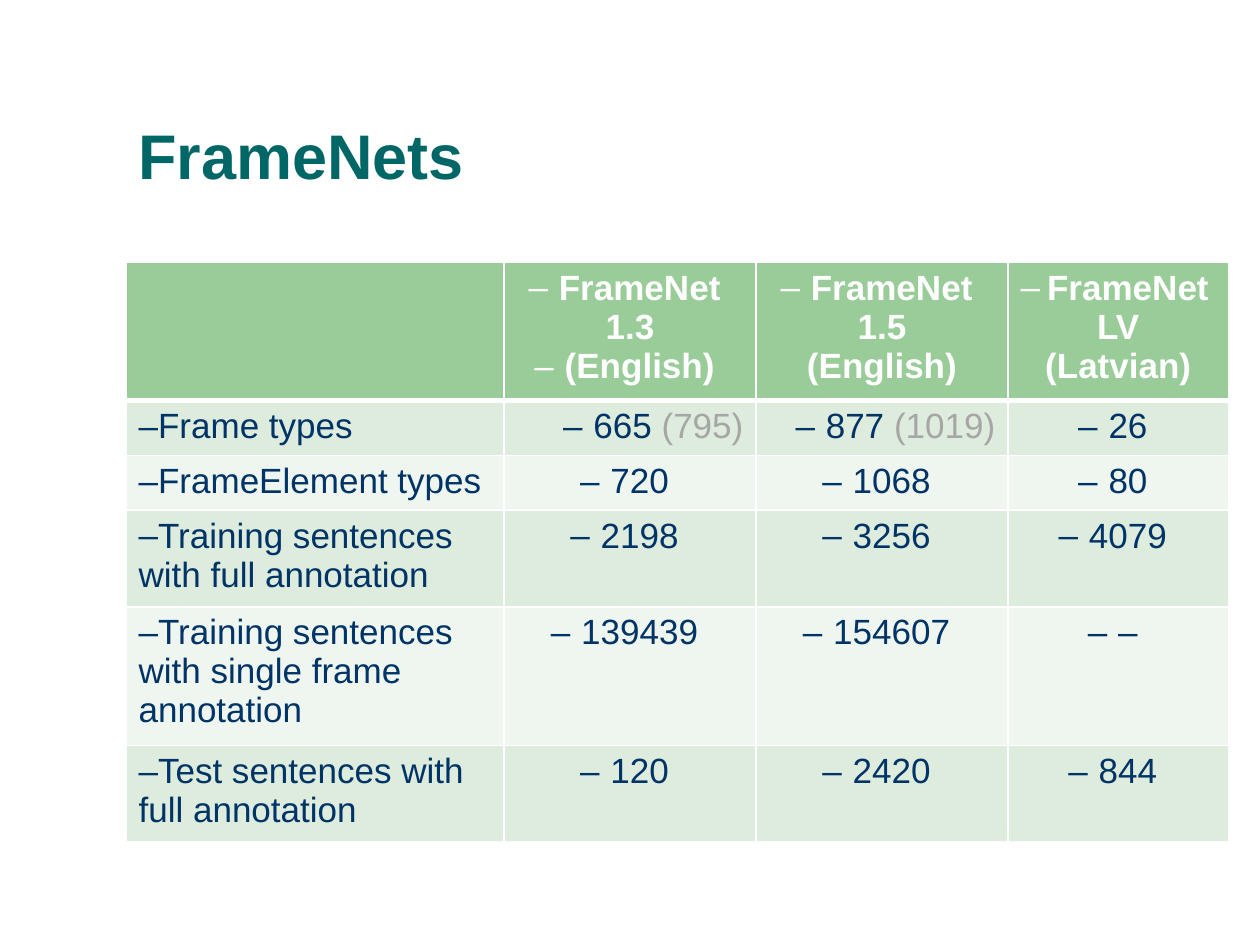
import pptx
import pptx.dml.color
import pptx.enum.text
import pptx.oxml.ns
import pptx.util
from lxml import etree

RGBColor = pptx.dml.color.RGBColor
Inches = pptx.util.Inches
Align = pptx.enum.text.PP_ALIGN

TEAL = RGBColor(0x00, 0x66, 0x66)
NAVY = RGBColor(0x00, 0x33, 0x66)
GRAY = RGBColor(0xA6, 0xA6, 0xA6)
WHITE = RGBColor(0xFF, 0xFF, 0xFF)
HEADER_GREEN = RGBColor(0x99, 0xCC, 0x99)
BAND_GREENS = (RGBColor(0xDE, 0xEC, 0xDE), RGBColor(0xEF, 0xF6, 0xEF))

FONT = "Arial"
WIDTH, HEIGHT = 10, 7.5
COLUMN_WIDTHS = (3, 2, 2, 1.75)
# Each row is as high as its lines of text plus the cell margins
ROW_LINES = (3, 1, 1, 2, 3, 2)
LINE_HEIGHT, CELL_MARGINS = 0.31, 0.1
BULLET_INDENT = -0.24

# One list of paragraphs per header cell; \v is a line break
HEADERS = ([], ["FrameNet 1.3", "(English)"],
           ["FrameNet 1.5\v(English)"], ["FrameNet LV\v(Latvian)"])
# A tuple holds a figure and the secondary figure shown in gray
ROWS = (
    ("Frame types", ("665 ", "(795)"), ("877 ", "(1019)"), "26"),
    ("FrameElement types", "720", "1068", "80"),
    ("Training sentences with full annotation", "2198", "3256", "4079"),
    ("Training sentences with single frame annotation",
     "139439", "154607", "–"),
    ("Test sentences with \vfull annotation", "120", "2420", "844"),
)


def add_text(paragraph, text, size, color, bold=False):
    """Add text as runs, with a line break at each \\v."""
    for index, line in enumerate(text.split("\v")):
        if index:
            paragraph.add_line_break()
        run = paragraph.add_run()
        run.text = line
        run.font.name = FONT
        run.font.size = pptx.util.Pt(size)
        run.font.bold = bold
        run.font.color.rgb = color


def add_dash_bullet(paragraph):
    properties = paragraph._p.get_or_add_pPr()
    properties.set("marL", "0")
    properties.set("indent", str(Inches(BULLET_INDENT)))
    for tag, key, value in (("a:buFont", "typeface", FONT),
                            ("a:buChar", "char", "–")):
        bullet = etree.SubElement(properties, pptx.oxml.ns.qn(tag))
        bullet.set(key, value)


def style_cell(cell, fill, top=1, bottom=1):
    """Draw white borders, then the fill."""
    properties = cell._tc.get_or_add_tcPr()
    for side, points in (("L", 1), ("R", 1), ("T", top), ("B", bottom)):
        line = etree.SubElement(properties, pptx.oxml.ns.qn("a:ln" + side))
        line.set("w", str(pptx.util.Pt(points)))
        solid = etree.SubElement(line, pptx.oxml.ns.qn("a:solidFill"))
        color = etree.SubElement(solid, pptx.oxml.ns.qn("a:srgbClr"))
        color.set("val", str(WHITE))
    cell.fill.solid()
    cell.fill.fore_color.rgb = fill


def add_title(slide, left, top, width, height):
    box = slide.shapes.add_textbox(*map(Inches, (left, top, width, height)))
    frame = box.text_frame
    frame.word_wrap = True
    frame.vertical_anchor = pptx.enum.text.MSO_ANCHOR.BOTTOM
    paragraph = frame.paragraphs[0]
    paragraph.line_spacing = 0.9
    add_text(paragraph, "FrameNets", 36, TEAL, bold=True)


def fill_header(table):
    for column, lines in enumerate(HEADERS):
        cell = table.cell(0, column)
        style_cell(cell, HEADER_GREEN, bottom=3)
        frame = cell.text_frame
        for index, line in enumerate(lines):
            paragraph = frame.add_paragraph() if index else frame.paragraphs[0]
            paragraph.alignment = Align.CENTER
            add_dash_bullet(paragraph)
            add_text(paragraph, line, 20, WHITE, bold=True)


def fill_body(table):
    for row, values in enumerate(ROWS, start=1):
        for column, value in enumerate(values):
            cell = table.cell(row, column)
            style_cell(cell, BAND_GREENS[(row - 1) % 2],
                       top=3 if row == 1 else 1)
            paragraph = cell.text_frame.paragraphs[0]
            paired = isinstance(value, tuple)
            if column:
                paragraph.alignment = Align.RIGHT if paired else Align.CENTER
            add_dash_bullet(paragraph)
            parts = value if paired else (value,)
            for part, color in zip(parts, (NAVY, GRAY)):
                add_text(paragraph, part, 20, color)


def add_comparison_table(slide, left, top, width):
    heights = [CELL_MARGINS + LINE_HEIGHT * lines for lines in ROW_LINES]
    frame = slide.shapes.add_table(
        len(heights), len(COLUMN_WIDTHS), Inches(left), Inches(top),
        Inches(width), Inches(sum(heights)))
    table = frame.table
    for column, share in zip(table.columns, COLUMN_WIDTHS):
        column.width = Inches(width * share / sum(COLUMN_WIDTHS))
    for row, height in zip(table.rows, heights):
        row.height = Inches(height)
    fill_header(table)
    fill_body(table)


def main():
    presentation = pptx.Presentation()
    presentation.slide_width = Inches(WIDTH)
    presentation.slide_height = Inches(HEIGHT)
    slide = presentation.slides.add_slide(presentation.slide_layouts[6])

    # Title and table share the left edge and the width
    left, width = 0.1 * WIDTH, sum(COLUMN_WIDTHS)
    add_title(slide, left, 0.33, width, 1.25)
    add_comparison_table(slide, left, 2.08, width)
    presentation.save("out.pptx")


if __name__ == "__main__":
    main()
